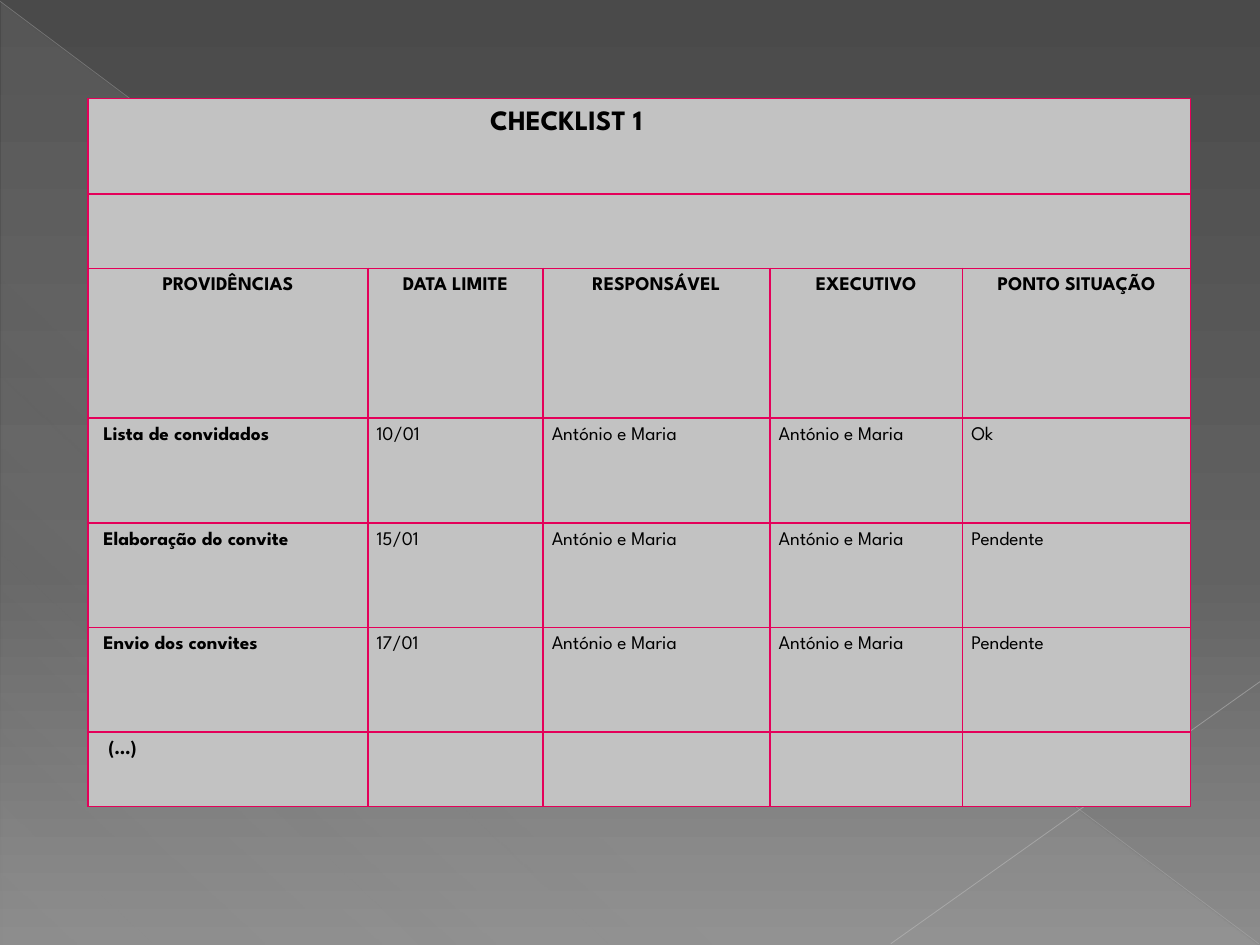
from lxml import etree
from pptx import Presentation
from pptx.dml.color import RGBColor
from pptx.enum import shapes, text
from pptx.oxml import ns
from pptx.util import Inches, Pt

FONT = "League Spartan"
BLACK = RGBColor(0, 0, 0)
CELL = RGBColor(0xC2, 0xC2, 0xC2)
PINK = RGBColor(0xE4, 0x00, 0x59)
PALE = RGBColor(0xBF, 0xBF, 0xBF)
SILVER = RGBColor(0xC6, 0xC6, 0xC6)

# Content
TITLE = "CHECKLIST 1"
HEADS = ["PROVIDÊNCIAS", "DATA LIMITE", "RESPONSÁVEL", "EXECUTIVO", "PONTO SITUAÇÃO"]
PAIR = "António e Maria"
TASKS = [
    ["Lista de convidados", "10/01", PAIR, PAIR, "Ok"],
    ["Elaboração do convite", "15/01", PAIR, PAIR, "Pendente"],
    ["Envio dos convites", "17/01", PAIR, PAIR, "Pendente"],
    ["(…)", "", "", "", ""],
]
ROWS = [[TITLE] + [""] * 4, [""] * 5, HEADS] + TASKS

# Grid, in inches
LEFT, TOP = 0.7, 0.78
WIDTHS = [2.22, 1.39, 1.8, 1.53, 1.81]
HEIGHTS = [0.76, 0.59, 1.19, 0.83, 0.83, 0.83, 0.59]
PAD = 0.07
INDENTS = {(0, 0): 3.12, (3, 0): 0.05, (4, 0): 0.05, (5, 0): 0.05, (6, 0): 0.09}

# Gradient stops: position, colour, opacity (position and opacity in percent)
BACK = [(0, "4A4A4A", 100), (60, "626262", 100), (100, "8C8C8C", 100)]
VEIL = [(0, "D2D2D2", 10), (70, "D2D2D2", 8), (100, "D2D2D2", 1)]

# Start, end, colour, width, opacity
LINES = [
    ((0, 0.01), (9.99, 7.49), PALE, 0.39, 35),
    ((10, 5.41), (7.07, 7.49), SILVER, 0.47, 45),
]


def add(parent, tag, **attrs):
    return etree.SubElement(parent, ns.qn(tag), {k: str(v) for k, v in attrs.items()})


def shade(fill, root, stops, angle):
    fill.gradient()
    grad = next(root.iter(ns.qn("a:gradFill")))
    bands = grad.find(ns.qn("a:gsLst"))
    for old in list(bands):
        bands.remove(old)
    for pos, color, alpha in stops:
        tint = add(add(bands, "a:gs", pos=pos * 1000), "a:srgbClr", val=color)
        add(tint, "a:alpha", val=alpha * 1000)
    grad.find(ns.qn("a:lin")).set("ang", str(angle * 60000))


def draw_line(slide, start, end, color, width, alpha):
    line = slide.shapes.add_connector(
        shapes.MSO_CONNECTOR.STRAIGHT, *map(Inches, start + end))
    line.line.color.rgb = color
    line.line.width = Pt(width)
    tint = next(line._element.spPr.iter(ns.qn("a:srgbClr")))
    add(tint, "a:alpha", val=alpha * 1000)
    add(line._element.spPr, "a:effectLst")


def frame(cell):
    props = cell._tc.get_or_add_tcPr()
    for spot, side in enumerate(("a:lnL", "a:lnR", "a:lnT", "a:lnB")):
        edge = etree.Element(ns.qn(side), w=str(Pt(1)))
        add(add(edge, "a:solidFill"), "a:srgbClr", val=str(PINK))
        props.insert(spot, edge)


def style(cell, words, row, col):
    cell.fill.solid()
    cell.fill.fore_color.rgb = CELL
    frame(cell)
    cell.margin_left = cell.margin_right = Inches(PAD)
    cell.margin_top = cell.margin_bottom = 0
    cell.vertical_anchor = text.MSO_ANCHOR.TOP
    para = cell.text_frame.paragraphs[0]
    para.text = words
    # A paragraph indent shifts the text without widening the column
    props = para._p.get_or_add_pPr()
    props.set("marL", str(Inches(INDENTS.get((row, col), 0))))
    props.set("indent", "0")
    para.line_spacing = 1.5
    para.space_after = Pt(10)
    para.alignment = text.PP_ALIGN.CENTER if row == 2 else text.PP_ALIGN.LEFT
    para.font.size = Pt(11)
    for run in para.runs:
        run.font.name = FONT
        run.font.size = Pt(16 if row == 0 else 11)
        run.font.bold = row < 3 or col == 0
        run.font.color.rgb = BLACK


def main():
    deck = Presentation()
    deck.slide_width, deck.slide_height = Inches(10), Inches(7.5)
    slide = deck.slides.add_slide(deck.slide_layouts[6])

    # Backdrop
    shade(slide.background.fill, slide._element, BACK, 90)
    veil = slide.shapes.add_shape(
        shapes.MSO_SHAPE.RIGHT_TRIANGLE, *map(Inches, (0.01, 0.02, 9.98, 7.48)))
    veil.shadow.inherit = False
    veil.line.fill.background()
    shade(veil.fill, veil._element, VEIL, 133)
    for line in LINES:
        draw_line(slide, *line)

    # Checklist table
    box = (LEFT, TOP, sum(WIDTHS), sum(HEIGHTS))
    table = slide.shapes.add_table(len(ROWS), len(WIDTHS), *map(Inches, box)).table
    table.first_row = table.horz_banding = False
    for column, width in zip(table.columns, WIDTHS):
        column.width = Inches(width)
    for band, height in zip(table.rows, HEIGHTS):
        band.height = Inches(height)
    for row, line in enumerate(ROWS):
        for col, words in enumerate(line):
            style(table.cell(row, col), words, row, col)
    for row in (0, 1):
        table.cell(row, 0).merge(table.cell(row, len(WIDTHS) - 1))

    deck.save("out.pptx")


if __name__ == "__main__":
    main()
